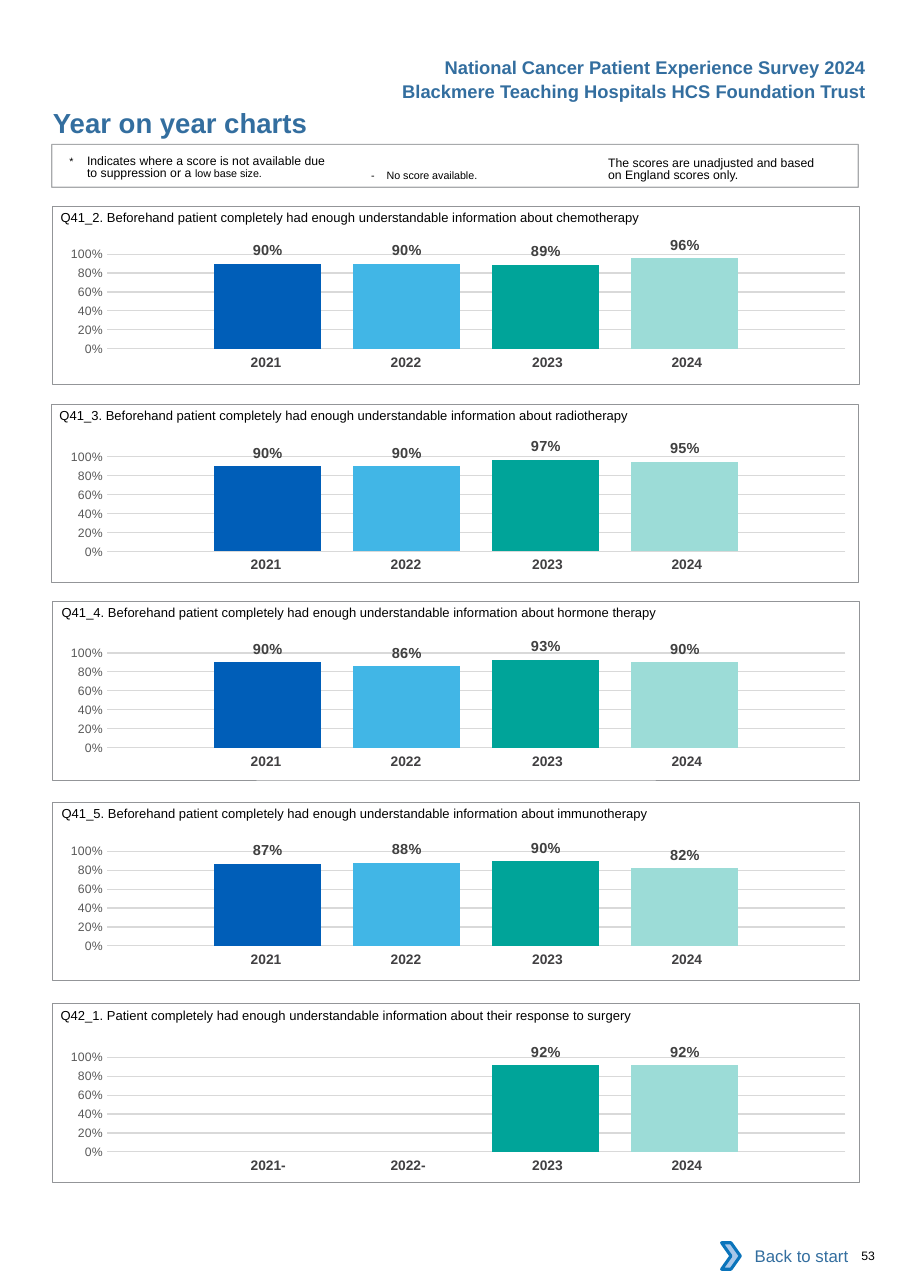
from lxml.etree import SubElement
from pptx import Presentation
from pptx.chart.data import CategoryChartData
from pptx.dml.color import RGBColor
from pptx.enum.chart import XL_CHART_TYPE as ChartType, XL_LABEL_POSITION as LabelPosition, XL_TICK_MARK as TickMark
from pptx.enum.shapes import MSO_SHAPE as Shape
from pptx.enum.text import MSO_ANCHOR as Anchor, PP_ALIGN as Align
from pptx.oxml import parse_xml
from pptx.oxml.ns import nsdecls, qn
from pptx.util import Inches, Pt

BLACK = RGBColor(0x00, 0x00, 0x00)
WHITE = RGBColor(0xFF, 0xFF, 0xFF)
HEADING_BLUE = RGBColor(0x33, 0x6E, 0x9F)
FRAME_GREY = RGBColor(0x93, 0x95, 0x98)
YEAR_GREY = RGBColor(0x41, 0x40, 0x42)
LABEL_GREY = RGBColor(0x40, 0x40, 0x40)
AXIS_GREY = RGBColor(0x59, 0x59, 0x59)
GRID_GREY = RGBColor(0xD9, 0xD9, 0xD9)
ARROW_FILL = RGBColor(0xA8, 0xC7, 0xE9)
ARROW_LINE = RGBColor(0x0A, 0x74, 0xBB)
YEAR_COLORS = [
    RGBColor(0x00, 0x5E, 0xB8),
    RGBColor(0x41, 0xB6, 0xE6),
    RGBColor(0x00, 0xA4, 0x99),
    RGBColor(0x9C, 0xDC, 0xD7),
]
NO_TABLE_STYLE = "{2D5ABB26-0587-4C30-8999-92F81FD0307C}"

prs = Presentation()
prs.slide_width, prs.slide_height = Inches(8.26), Inches(11.69)
slide = prs.slides.add_slide(prs.slide_layouts[5])
shapes = slide.shapes


def write(frame, runs, color=BLACK, bold=False, align=Align.LEFT, insets=(0, 0, 0, 0)):
    frame.word_wrap = True
    frame.margin_left, frame.margin_top, frame.margin_right, frame.margin_bottom = map(Inches, insets)
    paragraph = frame.paragraphs[0]
    paragraph.alignment = align
    for text, size in runs:
        run = paragraph.add_run()
        run.text = text
        run.font.name = "Arial"
        run.font.size = Pt(size)
        run.font.bold = bold
        run.font.color.rgb = color
    return paragraph


def add_frame(left, top, width, height, weight):
    frame = shapes.add_shape(Shape.RECTANGLE, Inches(left), Inches(top), Inches(width), Inches(height))
    frame.shadow.inherit = False
    frame.fill.background()
    frame.line.color.rgb = FRAME_GREY
    frame.line.width = Pt(weight)
    return frame


title = shapes.title
title.left, title.top, title.width, title.height = Inches(0.47), Inches(0.96), Inches(4.5), Inches(0.3)
title.text_frame.vertical_anchor = Anchor.TOP
write(title.text_frame, [("Year on year charts", 18)], HEADING_BLUE, True, insets=(0.01, 0, 0, 0))

for top, heading in [
    (0.46, "National Cancer Patient Experience Survey 2024"),
    (0.68, "Blackmere Teaching Hospitals HCS Foundation Trust"),
]:
    header = shapes.add_textbox(Inches(2.96), Inches(top), Inches(5), Inches(0.3))
    write(header.text_frame, [(heading, 12)], HEADING_BLUE, True, Align.RIGHT, (0.1, 0.05, 0.1, 0.05))

legend = add_frame(0.47, 1.31, 7.32, 0.39, 0.75)
legend_color = legend.line.fill.fore_color
SubElement(legend.element.spPr.find(".//" + qn("a:srgbClr")), qn("a:alpha"), val="80000")

for left, top, width, hanging, runs in [
    (0.63, 1.38, 2.38, 0.16, [
        ("*\t", 7), ("Indicates where a score is not available due to suppression or a ", 8), ("low base size.", 7),
    ]),
    (3.37, 1.51, 1.6, 0.14, [("-\tNo score available.", 7)]),
    (5.52, 1.4, 1.97, 0, [("The scores are unadjusted and based on England scores only.", 8)]),
]:
    note = shapes.add_textbox(Inches(left), Inches(top), Inches(width), Inches(0.27))
    paragraph = write(note.text_frame, runs, insets=(0, 0.03, 0, 0))
    paragraph.line_spacing = Pt(8.1)
    properties = paragraph._p.get_or_add_pPr()
    properties.set("marL", str(Inches(hanging)))
    properties.set("indent", str(-Inches(hanging)))

ENOUGH = "Beforehand patient completely had enough understandable information about "
YEARS = ["2021", "2022", "2023", "2024"]
questions = [
    ("Q41_2. " + ENOUGH + "chemotherapy", 0.55, 0.48, 1.87, 2.12, YEARS, [0.9, 0.9, 0.89, 0.96]),
    ("Q41_3. " + ENOUGH + "radiotherapy", 0.54, 0.47, 3.67, 3.96, YEARS, [0.9, 0.9, 0.97, 0.95]),
    ("Q41_4. " + ENOUGH + "hormone therapy", 0.56, 0.48, 5.46, 5.74, YEARS, [0.9, 0.86, 0.93, 0.9]),
    ("Q41_5. " + ENOUGH + "immunotherapy", 0.56, 0.48, 7.28, 7.54, YEARS, [0.87, 0.88, 0.9, 0.82]),
    ("Q42_1. Patient completely had enough understandable information about their response to surgery",
     0.55, 0.48, 9.11, 9.41, ["2021-", "2022-", "2023", "2024"], [None, None, 0.92, 0.92]),
]

for question, text_left, frame_left, frame_top, chart_top, years, scores in questions:
    year_table = shapes.add_table(
        1, 4, Inches(1.73), Inches(chart_top + 1.05), Inches(5.15), Inches(0.27)).table
    year_table.first_row = year_table.horz_banding = False
    year_table._tbl.tblPr.find(qn("a:tableStyleId")).text = NO_TABLE_STYLE
    year_table.rows[0].height = Inches(0.27)
    for column, (year, width, right_inset) in enumerate(zip(years, (1.27, 1.27, 1.34, 1.27), (0, 0, 0.04, 0.12))):
        year_table.columns[column].width = Inches(width)
        cell = year_table.cell(0, column)
        cell.fill.background()
        left_inset = 0.14 if year.endswith("-") else 0.1
        cell.margin_left, cell.margin_right = Inches(left_inset), Inches(right_inset)
        cell.margin_top = cell.margin_bottom = Inches(0.05)
        paragraph = cell.text_frame.paragraphs[0]
        paragraph.alignment = Align.CENTER
        run = paragraph.add_run()
        run.text = year
        run.font.name, run.font.size, run.font.bold = "Arial", Pt(9), True
        run.font.color.rgb = YEAR_GREY

    data = CategoryChartData(number_format="0%")
    data.categories = ["1"]
    for number, score in enumerate(scores, 1):
        data.add_series(f"Series {number}", [score])
    chart = shapes.add_chart(
        ChartType.COLUMN_CLUSTERED, Inches(0.39), Inches(chart_top), Inches(7.32), Inches(1.29), data).chart
    chart.has_legend = chart.has_title = False
    chart.font.name, chart.font.size = "Calibri", Pt(10)
    chart.font.color.rgb = BLACK
    chart.category_axis.visible = False
    percent_axis = chart.value_axis
    percent_axis.minimum_scale, percent_axis.maximum_scale, percent_axis.major_unit = 0, 1, 0.2
    percent_axis.major_tick_mark = percent_axis.minor_tick_mark = TickMark.NONE
    percent_axis.format.line.fill.background()
    percent_axis.major_gridlines.format.line.color.rgb = GRID_GREY
    percent_axis.major_gridlines.format.line.width = Pt(0.75)
    percent_axis.tick_labels.number_format = "0%"
    percent_axis.tick_labels.number_format_is_linked = False
    percent_axis.tick_labels.font.name = "Arial"
    percent_axis.tick_labels.font.size = Pt(8)
    percent_axis.tick_labels.font.color.rgb = AXIS_GREY
    plot = chart.plots[0]
    plot.vary_by_categories = False
    plot.gap_width, plot.overlap = 200, -30
    for series, color in zip(plot.series, YEAR_COLORS):
        series.format.fill.solid()
        series.format.fill.fore_color.rgb = color
        labels = series.data_labels
        labels.show_value = True
        labels.position = LabelPosition.OUTSIDE_END
        labels.number_format, labels.number_format_is_linked = "0%", False
        labels.font.name, labels.font.size, labels.font.bold = "Arial", Pt(9.5), True
        labels.font.color.rgb = LABEL_GREY
    plot_area = chart.element.chart.plotArea
    for layout in plot_area.findall(qn("c:layout")):
        plot_area.remove(layout)
    plot_area.insert(0, parse_xml(
        f'<c:layout {nsdecls("c")}><c:manualLayout><c:layoutTarget val="inner"/>'
        '<c:xMode val="edge"/><c:yMode val="edge"/><c:x val="0.08"/><c:y val="0.145"/>'
        '<c:w val="0.915"/><c:h val="0.666"/></c:manualLayout></c:layout>'))

    add_frame(frame_left, frame_top, 7.32, 1.62, 0.5)
    caption = shapes.add_textbox(Inches(text_left), Inches(frame_top - 0.06), Inches(7.2), Inches(0.24))
    write(caption.text_frame, [(question, 8.5)], insets=(0, 0.09, 0, 0))

back = shapes.add_shape(Shape.RECTANGLE, Inches(6.62), Inches(11.19), Inches(1.18), Inches(0.42))
back.shadow.inherit = False
back.fill.solid()
back.fill.fore_color.rgb = WHITE
back.line.fill.background()
back.text_frame.vertical_anchor = Anchor.MIDDLE
write(back.text_frame, [("Back to start", 11)], HEADING_BLUE, align=Align.RIGHT, insets=(0.1, 0.05, 0.1, 0.05))

arrow = shapes.add_shape(Shape.CHEVRON, Inches(6.55), Inches(11.28), Inches(0.17), Inches(0.24))
arrow.shadow.inherit = False
arrow.fill.solid()
arrow.fill.fore_color.rgb = ARROW_FILL
arrow.line.color.rgb = ARROW_LINE
arrow.line.width = Pt(2)

page_number = shapes.add_textbox(Inches(7.72), Inches(11.33), Inches(0.51), Inches(0.13))
write(page_number.text_frame, [("53", 8)], insets=(0.1, 0, 0, 0))

prs.save("out.pptx")
